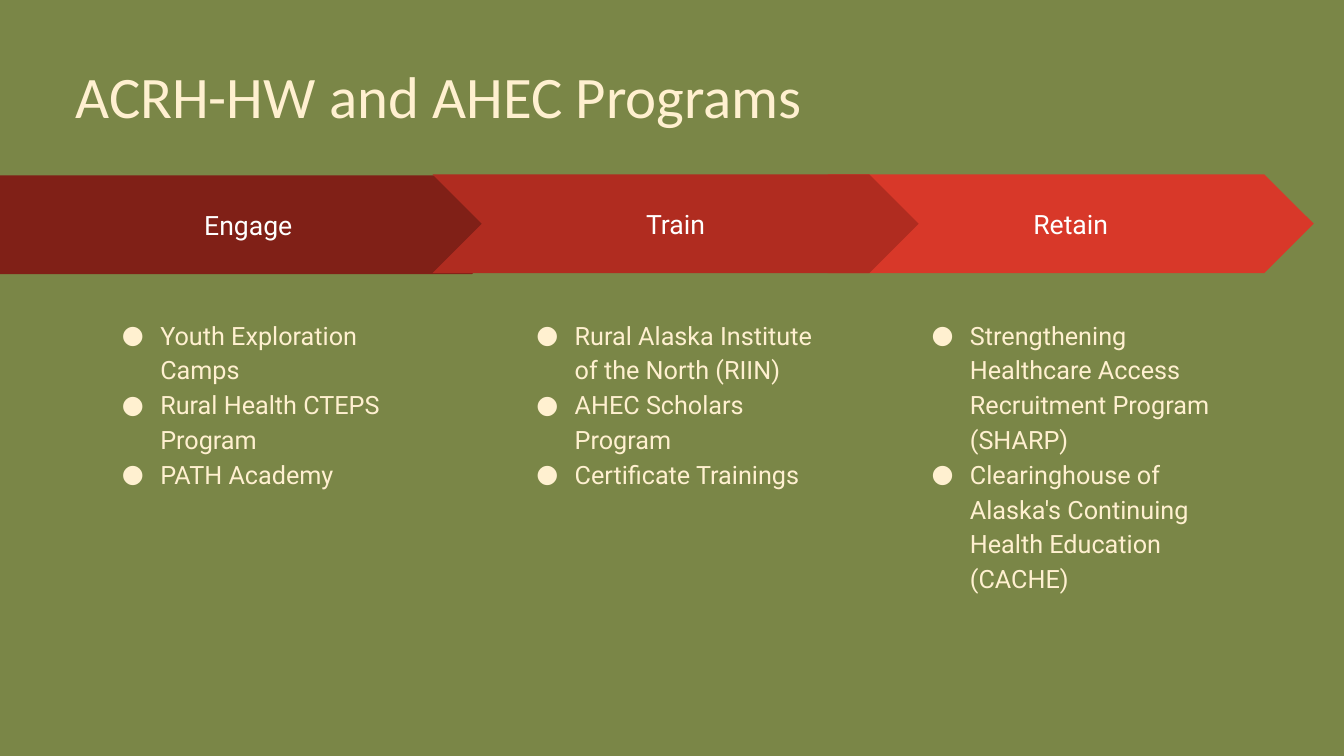
import pptx
import pptx.util
from lxml import etree
from pptx.dml.color import RGBColor
from pptx.enum.shapes import MSO_SHAPE
from pptx.enum.text import MSO_ANCHOR, PP_ALIGN
from pptx.oxml.ns import qn
from pptx.util import Inches, Pt

OLIVE = RGBColor(0x7A, 0x86, 0x47)
CREAM = RGBColor(0xFF, 0xF0, 0xD0)
WHITE = RGBColor(0xFF, 0xFF, 0xFF)
DARK_RED = RGBColor(0x80, 0x20, 0x17)
MID_RED = RGBColor(0xB0, 0x2C, 0x20)
BRIGHT_RED = RGBColor(0xD8, 0x38, 0x29)

TITLE = "ACRH-HW and AHEC Programs"
# Back to front: label, shape, colour, arrow (left, top, width), list left, programs
STAGES = [
    ("Retain", MSO_SHAPE.CHEVRON, BRIGHT_RED, (8.21, 1.73, 4.82), 8.99, [
        "Strengthening Healthcare Access Recruitment Program (SHARP)",
        "Clearinghouse of Alaska's Continuing Health Education (CACHE)",
    ]),
    ("Engage", MSO_SHAPE.PENTAGON, DARK_RED, (0, 1.74, 5.17), 0.96, [
        "Youth Exploration Camps",
        "Rural Health CTEPS Program",
        "PATH Academy",
    ]),
    ("Train", MSO_SHAPE.CHEVRON, MID_RED, (4.29, 1.73, 4.82), 5.07, [
        "Rural Alaska Institute of the North (RIIN)",
        "AHEC Scholars Program",
        "Certificate Trainings",
    ]),
]
ARROW_HEIGHT = 0.98
LIST_TOP, LIST_WIDTH, LIST_HEIGHT = 3, 3.26, 3.81
PADDING = 0.13


def pad(frame):
    frame.word_wrap = True
    frame.margin_left = frame.margin_right = Inches(PADDING)
    frame.margin_top = frame.margin_bottom = Inches(PADDING)


def set_font(para, name, size, color):
    para.font.name = name
    para.font.size = Pt(size)
    para.font.color.rgb = color


def add_bullet(para):
    """Give the paragraph a cream dot and a hanging indent."""
    properties = para._p.get_or_add_pPr()
    properties.set("marL", str(Inches(0.5)))
    properties.set("indent", str(Inches(-0.38)))
    color = etree.SubElement(properties, qn("a:buClr"))
    etree.SubElement(color, qn("a:srgbClr"), val=str(CREAM))
    etree.SubElement(properties, qn("a:buFont"), typeface="Roboto")
    etree.SubElement(properties, qn("a:buChar"), char="●")


def add_arrow(page, label, kind, color, place):
    left, top, width = map(Inches, place)
    arrow = page.shapes.add_shape(kind, left, top, width, Inches(ARROW_HEIGHT))
    arrow.adjustments[0] = 0.5
    arrow.shadow.inherit = False
    arrow.fill.solid()
    arrow.fill.fore_color.rgb = color
    arrow.line.fill.background()
    frame = arrow.text_frame
    pad(frame)
    frame.vertical_anchor = MSO_ANCHOR.MIDDLE
    para = frame.paragraphs[0]
    para.text = label
    para.alignment = PP_ALIGN.CENTER
    set_font(para, "Roboto", 19, WHITE)


def add_programs(page, left, programs):
    box = page.shapes.add_textbox(Inches(left), Inches(LIST_TOP),
                                  Inches(LIST_WIDTH), Inches(LIST_HEIGHT))
    frame = box.text_frame
    pad(frame)
    for index, program in enumerate(programs):
        para = frame.add_paragraph() if index else frame.paragraphs[0]
        para.text = program
        add_bullet(para)
        para.line_spacing = 1.15
        set_font(para, "Roboto", 18, CREAM)


def main():
    deck = pptx.Presentation()
    deck.slide_width, deck.slide_height = Inches(13.33), Inches(7.5)
    page = deck.slides.add_slide(deck.slide_layouts[6])
    page.background.fill.solid()
    page.background.fill.fore_color.rgb = OLIVE

    title = page.shapes.add_textbox(Inches(0.65), Inches(0.54), Inches(10.29), Inches(1.53))
    title.text_frame.word_wrap = True
    heading = title.text_frame.paragraphs[0]
    heading.text = TITLE
    set_font(heading, "Calibri", 42, CREAM)

    for label, kind, color, place, list_left, programs in STAGES:
        add_arrow(page, label, kind, color, place)
        add_programs(page, list_left, programs)

    deck.save("out.pptx")


if __name__ == "__main__":
    main()
